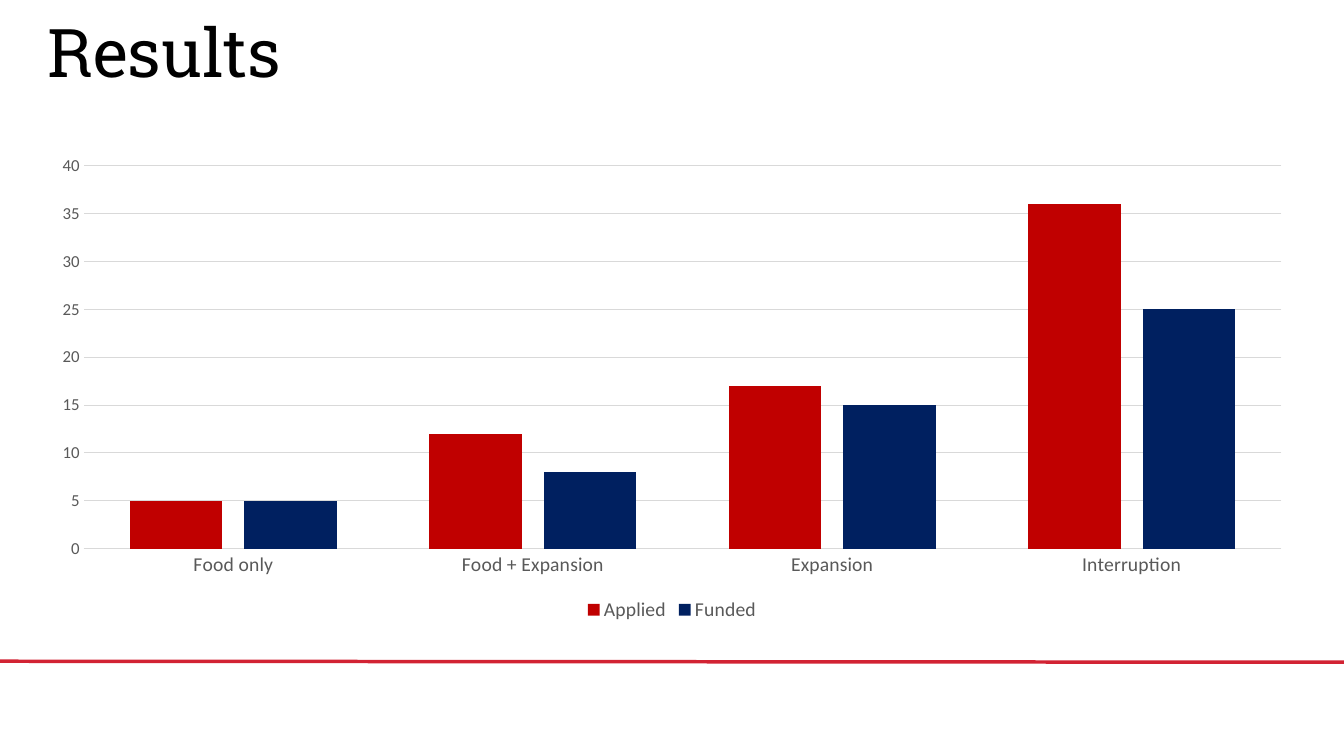
from dataclasses import dataclass

from lxml.etree import SubElement
from pptx import Presentation
from pptx.chart.axis import CategoryAxis, ValueAxis
from pptx.chart.data import CategoryChartData
from pptx.dml.color import RGBColor
from pptx.enum.chart import XL_CHART_TYPE, XL_LEGEND_POSITION, XL_TICK_MARK
from pptx.enum.shapes import MSO_CONNECTOR
from pptx.enum.text import MSO_ANCHOR, MSO_AUTO_SIZE, PP_ALIGN
from pptx.oxml.ns import qn
from pptx.slide import Slide
from pptx.text.text import Font
from pptx.util import Inches, Pt

BLACK = RGBColor(0x00, 0x00, 0x00)
GRAY = RGBColor(0x59, 0x59, 0x59)
LIGHT_GRAY = RGBColor(0xD9, 0xD9, 0xD9)
RED = RGBColor(0xC0, 0x00, 0x00)
NAVY = RGBColor(0x00, 0x20, 0x60)
RULE_RED = RGBColor(0xD2, 0x23, 0x33)

LEFT, WIDTH = Inches(0.37), Inches(12.59)
CATEGORIES = ("Food only", "Food + Expansion", "Expansion", "Interruption")


@dataclass(frozen=True)
class Series:
    name: str
    values: tuple[int, ...]
    color: RGBColor


SERIES = (
    Series("Applied", (5, 12, 17, 36), RED),
    Series("Funded", (5, 8, 15, 25), NAVY),
)


def style_font(font: Font, size: float, color: RGBColor, name: str = "Calibri") -> None:
    font.name = name
    font.size = Pt(size)
    font.bold = False
    font.color.rgb = color


def add_rule(s: Slide) -> None:
    line = s.shapes.add_connector(
        MSO_CONNECTOR.STRAIGHT, 0, Inches(6.56), Inches(13.33), Inches(6.57)
    )
    line.line.color.rgb = RULE_RED
    line.line.width = Pt(2.5)
    SubElement(line._element.spPr, qn("a:effectLst"))


def set_title(s: Slide, text: str) -> None:
    title = s.shapes.title
    title.left, title.top = LEFT, Inches(0.14)
    title.width, title.height = WIDTH, Inches(1.31)
    tf = title.text_frame
    tf.text = text
    tf.word_wrap = True
    tf.auto_size = MSO_AUTO_SIZE.NONE
    tf.vertical_anchor = MSO_ANCHOR.TOP
    p = tf.paragraphs[0]
    p.alignment = PP_ALIGN.LEFT
    p.line_spacing = 0.9
    style_font(p.runs[0].font, 48, BLACK, "Roboto Slab")


def style_axis(axis: CategoryAxis | ValueAxis, size: float) -> None:
    axis.major_tick_mark = axis.minor_tick_mark = XL_TICK_MARK.NONE
    style_font(axis.tick_labels.font, size, GRAY)


def add_results_chart(s: Slide) -> None:
    data = CategoryChartData()
    data.categories = CATEGORIES
    for series in SERIES:
        data.add_series(series.name, series.values)
    chart = s.shapes.add_chart(
        XL_CHART_TYPE.COLUMN_CLUSTERED, LEFT, Inches(1.45), WIDTH, Inches(4.76), data
    ).chart
    style_font(chart.font, 10, BLACK)
    chart.has_title = False

    plot = chart.plots[0]
    plot.gap_width, plot.overlap = 100, -24
    plot.vary_by_categories = False
    for bars, series in zip(plot.series, SERIES):
        bars.format.fill.solid()
        bars.format.fill.fore_color.rgb = series.color

    style_axis(chart.category_axis, 14)
    axis_line = chart.category_axis.format.line
    axis_line.color.rgb = LIGHT_GRAY
    axis_line.width = Pt(1)

    values = chart.value_axis
    style_axis(values, 12)
    values.minimum_scale, values.maximum_scale, values.major_unit = 0, 40, 5
    values.format.line.fill.background()
    grid = values.major_gridlines.format.line
    grid.color.rgb = LIGHT_GRAY
    grid.width = Pt(0.75)

    chart.has_legend = True
    chart.legend.position = XL_LEGEND_POSITION.BOTTOM
    chart.legend.include_in_layout = False
    style_font(chart.legend.font, 14, GRAY)


def main() -> None:
    prs = Presentation()
    prs.slide_width, prs.slide_height = Inches(13.33), Inches(7.5)
    s = prs.slides.add_slide(prs.slide_layouts.get_by_name("Title Only"))
    add_rule(s)
    set_title(s, "Results")
    add_results_chart(s)
    prs.save("out.pptx")


if __name__ == "__main__":
    main()
